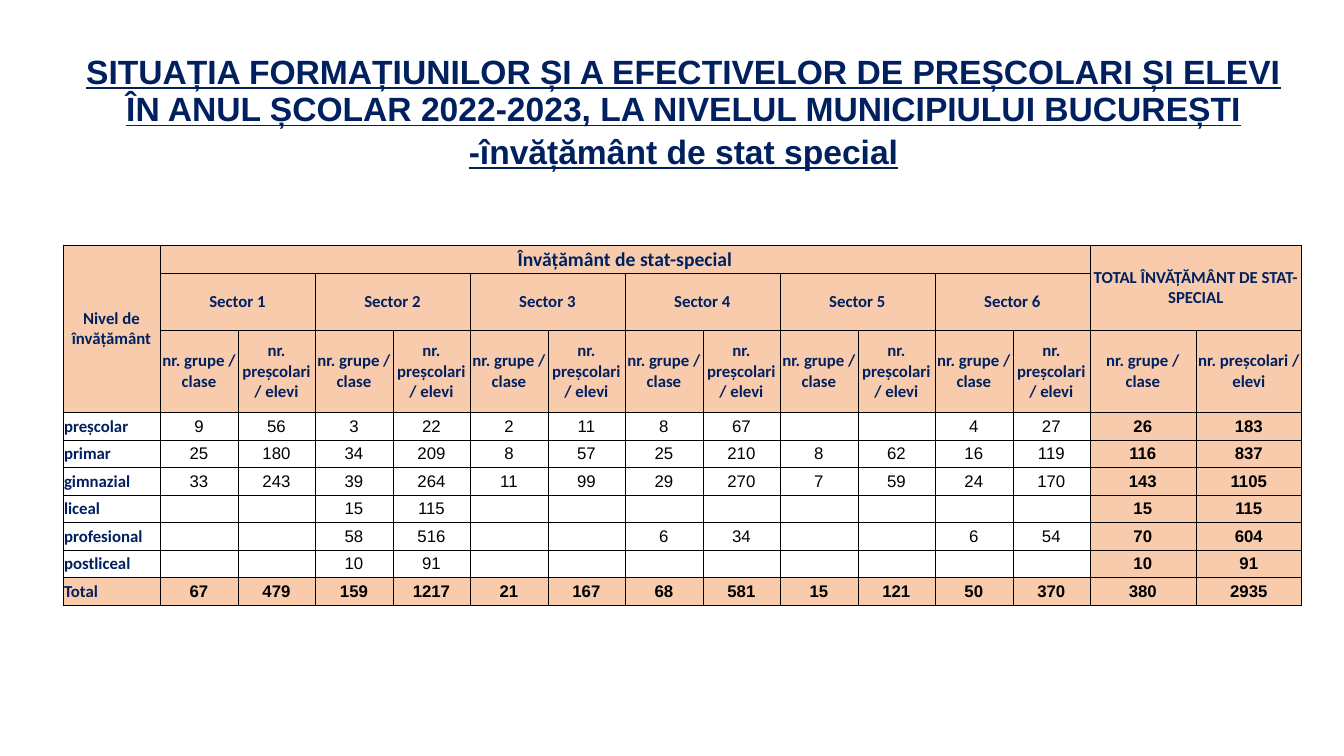
from lxml.etree import SubElement
from pptx import Presentation
from pptx.dml.color import RGBColor
from pptx.enum.text import MSO_ANCHOR, PP_ALIGN
from pptx.oxml.ns import qn
from pptx.util import Pt

PX = 914400 / 100.8
NAVY, BLACK, WHITE, PEACH, BLUE = "002060", "000000", "FFFFFF", "F8CBAD", "0070C0"


def add_grid(page, left, top, widths, heights):
    frame = page.shapes.add_table(
        len(heights), len(widths), round(left * PX), round(top * PX),
        round(sum(widths) * PX), round(sum(heights) * PX))
    grid = frame.table
    grid.first_row = False
    grid.horz_banding = False
    for column, width in zip(grid.columns, widths):
        column.width = round(width * PX)
    for row, height in zip(grid.rows, heights):
        row.height = round(height * PX)
    return grid


def write_cell(cell, text, size, font, color, bold=True, align=PP_ALIGN.CENTER):
    cell.margin_left = cell.margin_right = cell.margin_top = round(PX)
    cell.margin_bottom = 0
    cell.vertical_anchor = MSO_ANCHOR.MIDDLE
    para = cell.text_frame.paragraphs[0]
    para.alignment = align
    para.font.size = Pt(size)
    para.font.name = font
    para.font.bold = bold
    para.font.color.rgb = RGBColor.from_string(color)
    if text:
        para.add_run().text = text
    else:
        SubElement(para._p, qn("a:endParaRPr"), sz=str(size * 100))
    return para


deck = Presentation()
deck.slide_width = round(1344 * PX)
deck.slide_height = round(756 * PX)
page = deck.slides.add_slide(deck.slide_layouts[6])

title_lines = [
    "SITUAȚIA FORMAȚIUNILOR ȘI A EFECTIVELOR DE PREȘCOLARI ȘI ELEVI "
    "ÎN ANUL ȘCOLAR 2022-2023, LA NIVELUL MUNICIPIULUI BUCUREȘTI",
    "-învățământ de stat special",
]
title = add_grid(page, 73, 50, [1221], [82, 41])
for index, line in enumerate(title_lines):
    cell = title.cell(index, 0)
    cell.fill.background()
    para = write_cell(cell, line, 24, "Arial", NAVY)
    para.font.underline = True
    outline = SubElement(para.runs[0]._r.get_or_add_rPr(), qn("a:ln"), w="9525")
    fill = SubElement(outline, qn("a:solidFill"))
    SubElement(fill, qn("a:srgbClr"), val=BLUE)

header = {
    (0, 0): "Nivel de învățământ",
    (0, 1): "Învățământ de stat-special",
    (0, 13): "TOTAL ÎNVĂȚĂMÂNT DE STAT-SPECIAL",
}
merges = [(0, 0, 2, 0), (0, 1, 0, 12), (0, 13, 1, 14)]
for sector in range(6):
    first = 1 + 2 * sector
    header[1, first] = f"Sector {sector + 1}"
    merges.append((1, first, 1, first + 1))
for column in range(1, 15):
    header[2, column] = "nr. grupe / clase" if column % 2 else "nr. preșcolari / elevi"

levels = [
    ["preșcolar", 9, 56, 3, 22, 2, 11, 8, 67, "", "", 4, 27, 26, 183],
    ["primar", 25, 180, 34, 209, 8, 57, 25, 210, 8, 62, 16, 119, 116, 837],
    ["gimnazial", 33, 243, 39, 264, 11, 99, 29, 270, 7, 59, 24, 170, 143, 1105],
    ["liceal", "", "", 15, 115, "", "", "", "", "", "", "", "", 15, 115],
    ["profesional", "", "", 58, 516, "", "", 6, 34, "", "", 6, 54, 70, 604],
    ["postliceal", "", "", 10, 91, "", "", "", "", "", "", "", "", 10, 91],
    ["Total", 67, 479, 159, 1217, 21, 167, 68, 581, 15, 121, 50, 370, 380, 2935],
]

enrolment = add_grid(page, 63, 245, [97] + [78, 77] * 6 + [106, 106],
                     [28, 57, 82] + [28, 27] * 3 + [28])
for top, left, bottom, right in merges:
    enrolment.cell(top, left).merge(enrolment.cell(bottom, right))

for row in range(10):
    for column in range(15):
        cell = enrolment.cell(row, column)
        properties = cell._tc.get_or_add_tcPr()
        for side in ("lnL", "lnR", "lnT", "lnB"):
            border = SubElement(properties, qn(f"a:{side}"), w="6350")
            fill = SubElement(border, qn("a:solidFill"))
            SubElement(fill, qn("a:srgbClr"), val=BLACK)
        shaded = row < 3 or row == 9 or column > 12
        cell.fill.solid()
        cell.fill.fore_color.rgb = RGBColor.from_string(PEACH if shaded else WHITE)
        if row < 3:
            size = 14 if (row, column) == (0, 1) else 12
            write_cell(cell, header.get((row, column), ""), size, "Calibri", NAVY)
        elif column == 0:
            write_cell(cell, levels[row - 3][0], 12, "Calibri", NAVY, align=PP_ALIGN.LEFT)
        else:
            write_cell(cell, str(levels[row - 3][column]), 12, "Arial", BLACK, bold=shaded)

deck.save("out.pptx")
